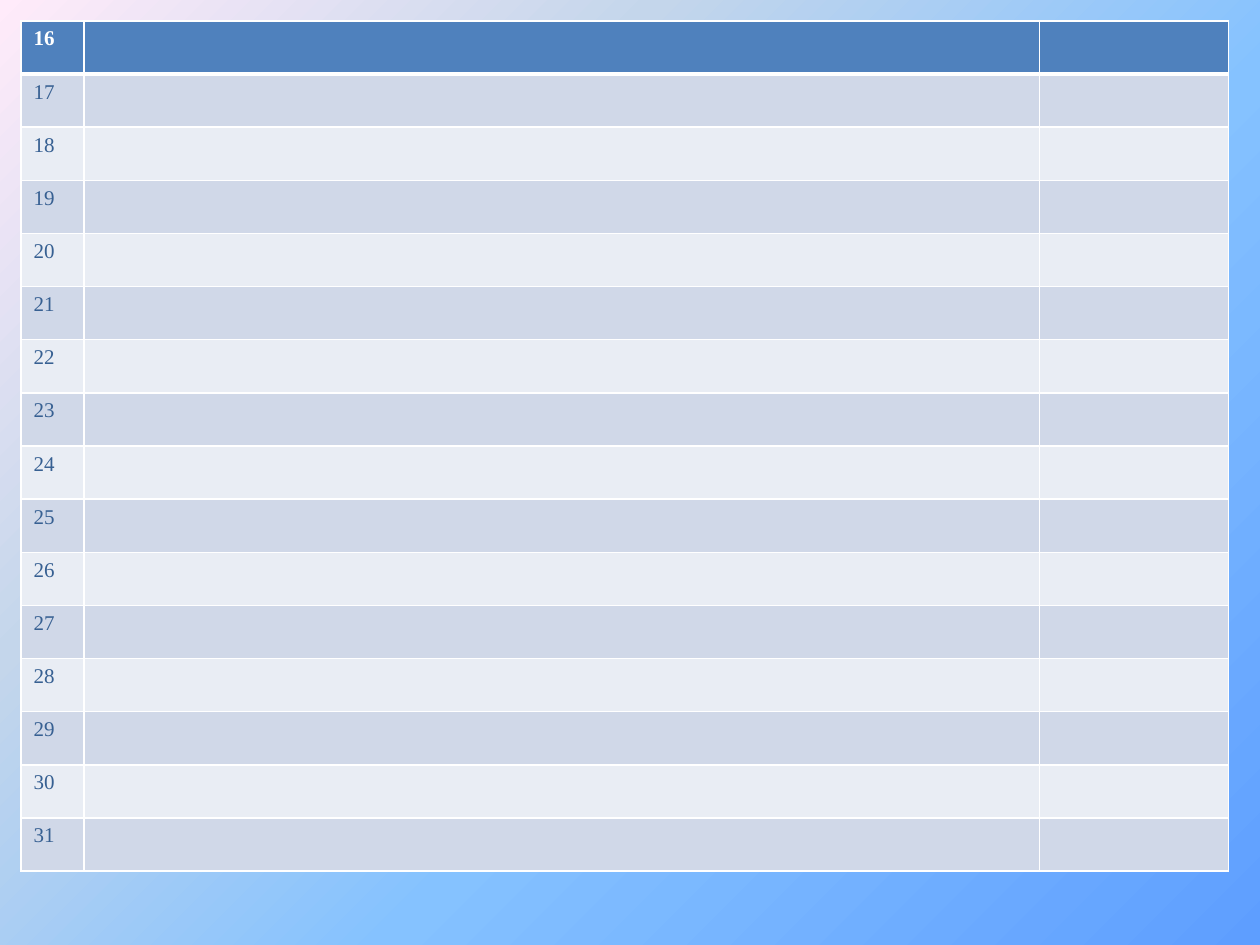
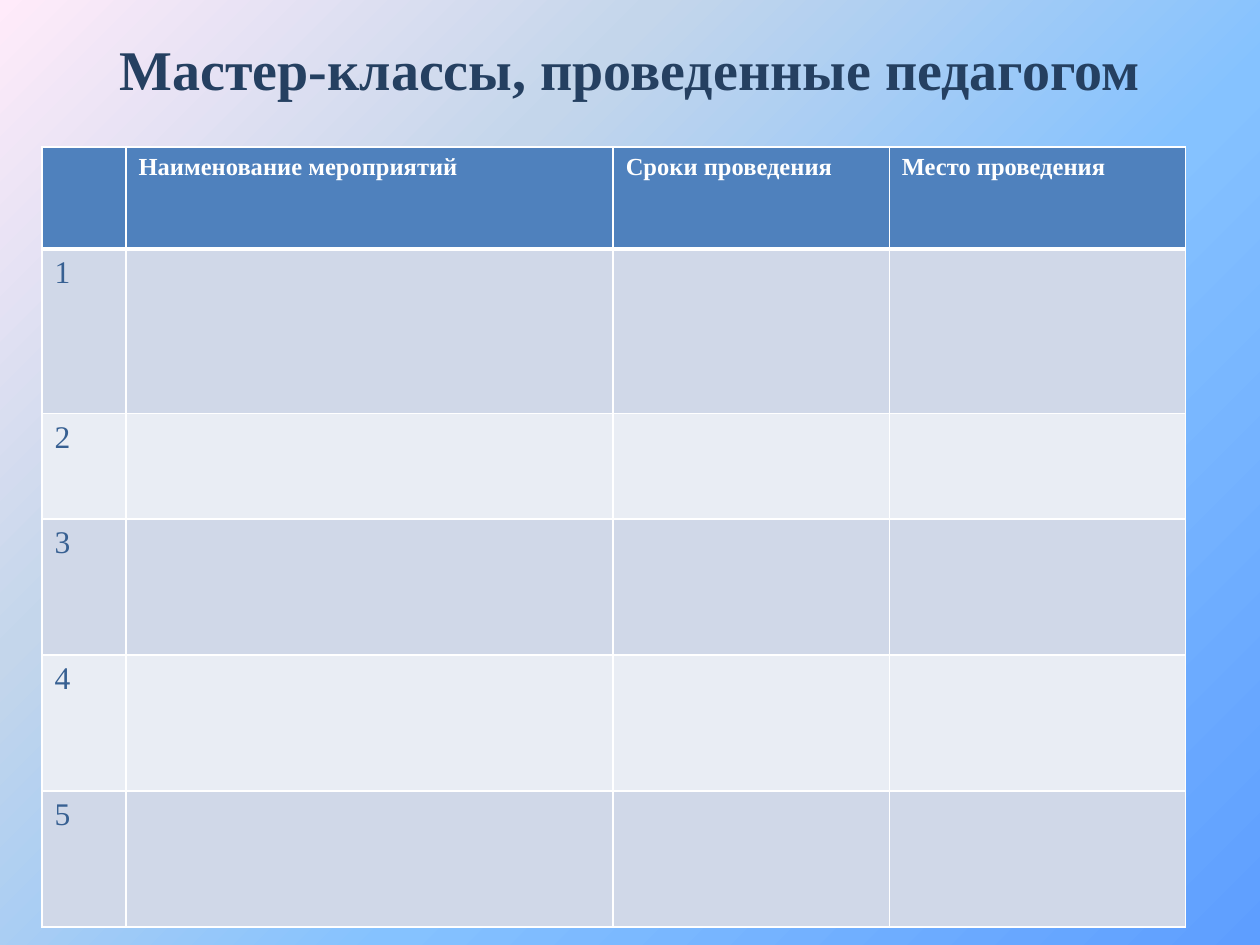
"""Builds two slides with numbered tables for a teacher's portfolio."""
from dataclasses import dataclass

from lxml import etree
from pptx import Presentation
from pptx.dml.color import RGBColor
from pptx.enum import text
from pptx.oxml import ns
from pptx import util as u

HUES = {"head": "4F81BD", "odd": "D0D8E8", "even": "E9EDF4", "rule": "FFFFFF",
        "white": "FFFFFF", "ink": "376092", "title": "254061"}
GLOW = {0: "5E9EFF", 40: "85C2FF", 70: "C4D6EB", 100: "FFEBFA"}
FONT = "Times New Roman"
WIDE, HIGH = u.Inches(10), u.Inches(7.5)
COLS, ROWS = 120, 90
HEADS = ["", "Наименование мероприятий", "Сроки проведения", "Место проведения"]


@dataclass
class Grid:
    """A table measured in columns and rows of the slide grid."""
    left: float
    top: float
    cols: list[float]
    rows: list[float]
    cells: list[list[str]]
    head: int
    body: int


def across(cols: float) -> int:
    """Turn grid columns into a length."""
    return round(WIDE * cols / COLS)


def down(rows: float) -> int:
    """Turn grid rows into a length."""
    return round(HIGH * rows / ROWS)


def style(font, size: int, hue: str, bold: bool) -> None:
    """Format a font."""
    form = {"name": FONT, "size": u.Pt(size), "bold": bold}
    for key, value in form.items():
        setattr(font, key, value)
    font.color.rgb = RGBColor.from_string(HUES[hue])


def paint(master) -> None:
    """Give the master its diagonal gradient."""
    fill = master.background.fill
    fill.gradient()
    fill.gradient_angle = 135
    stops = master.element.find(".//" + ns.qn("p:bg")).find(".//" + ns.qn("a:gsLst"))
    stops.clear()
    for share, hue in GLOW.items():
        stop = etree.SubElement(stops, ns.qn("a:gs"), pos=str(share * 1000))
        etree.SubElement(stop, ns.qn("a:srgbClr"), val=hue)


def edge(cell, row: int) -> None:
    """Draw the cell borders, with a heavy rule under the head row."""
    props = cell._tc.get_or_add_tcPr()
    for side in "LRTB":
        heavy = (row, side) in ((0, "B"), (1, "T"))
        line = etree.SubElement(props, ns.qn(f"a:ln{side}"),
                                w=str(u.Pt(3 if heavy else 1)))
        solid = etree.SubElement(line, ns.qn("a:solidFill"))
        etree.SubElement(solid, ns.qn("a:srgbClr"), val=HUES["rule"])


def draw(slide, grid: Grid) -> None:
    """Add a banded table to the slide."""
    table = slide.shapes.add_table(
        len(grid.rows), len(grid.cols), across(grid.left), down(grid.top),
        across(sum(grid.cols)), down(sum(grid.rows))).table
    for col, span in zip(table.columns, grid.cols):
        col.width = across(span)
    for i, (row, span) in enumerate(zip(table.rows, grid.rows)):
        row.height = down(span)
        band = "head" if i == 0 else "odd" if i % 2 else "even"
        for cell, words in zip(row.cells, grid.cells[i]):
            edge(cell, i)
            cell.fill.solid()
            cell.fill.fore_color.rgb = RGBColor.from_string(HUES[band])
            if words:
                run = cell.text_frame.paragraphs[0].add_run()
                run.text = words
                style(run.font, grid.body if i else grid.head,
                      "ink" if i else "white", i == 0)


def name(slide, words: str) -> None:
    """Place and format the slide title."""
    title = slide.shapes.title
    place = {"left": across(6), "top": down(3), "width": across(108), "height": down(7)}
    for key, value in place.items():
        setattr(title, key, value)
    frame = title.text_frame
    form = {"text": words, "word_wrap": True, "auto_size": text.MSO_AUTO_SIZE.NONE,
            "vertical_anchor": text.MSO_ANCHOR.MIDDLE}
    for key, value in form.items():
        setattr(frame, key, value)
    line = frame.paragraphs[0]
    line.alignment = text.PP_ALIGN.CENTER
    style(line.runs[0].font, 32, "title", True)


def count(first: int, last: int, width: int) -> list[list[str]]:
    """List rows that hold only their number."""
    return [[str(n)] + [""] * (width - 1) for n in range(first, last + 1)]


def main() -> None:
    """Build and save the slides."""
    deck = Presentation()
    deck.slide_width, deck.slide_height = WIDE, HIGH
    paint(deck.slide_master)
    title, blank = deck.slide_layouts[5], deck.slide_layouts[6]

    draw(deck.slides.add_slide(blank),
         Grid(2, 2, [6, 91, 18], [81 / 16] * 16, count(16, 31, 3), 12, 12))

    slide = deck.slides.add_slide(title)
    name(slide, "Мастер-классы, проведенные педагогом")
    draw(slide, Grid(4, 14, [8, 46.4, 26.3, 28.2], [9.7, 15.7, 10.05] + [12.95] * 3,
                     [HEADS] + count(1, 5, 4), 14, 18))
    deck.save("out.pptx")


if __name__ == "__main__":
    main()
